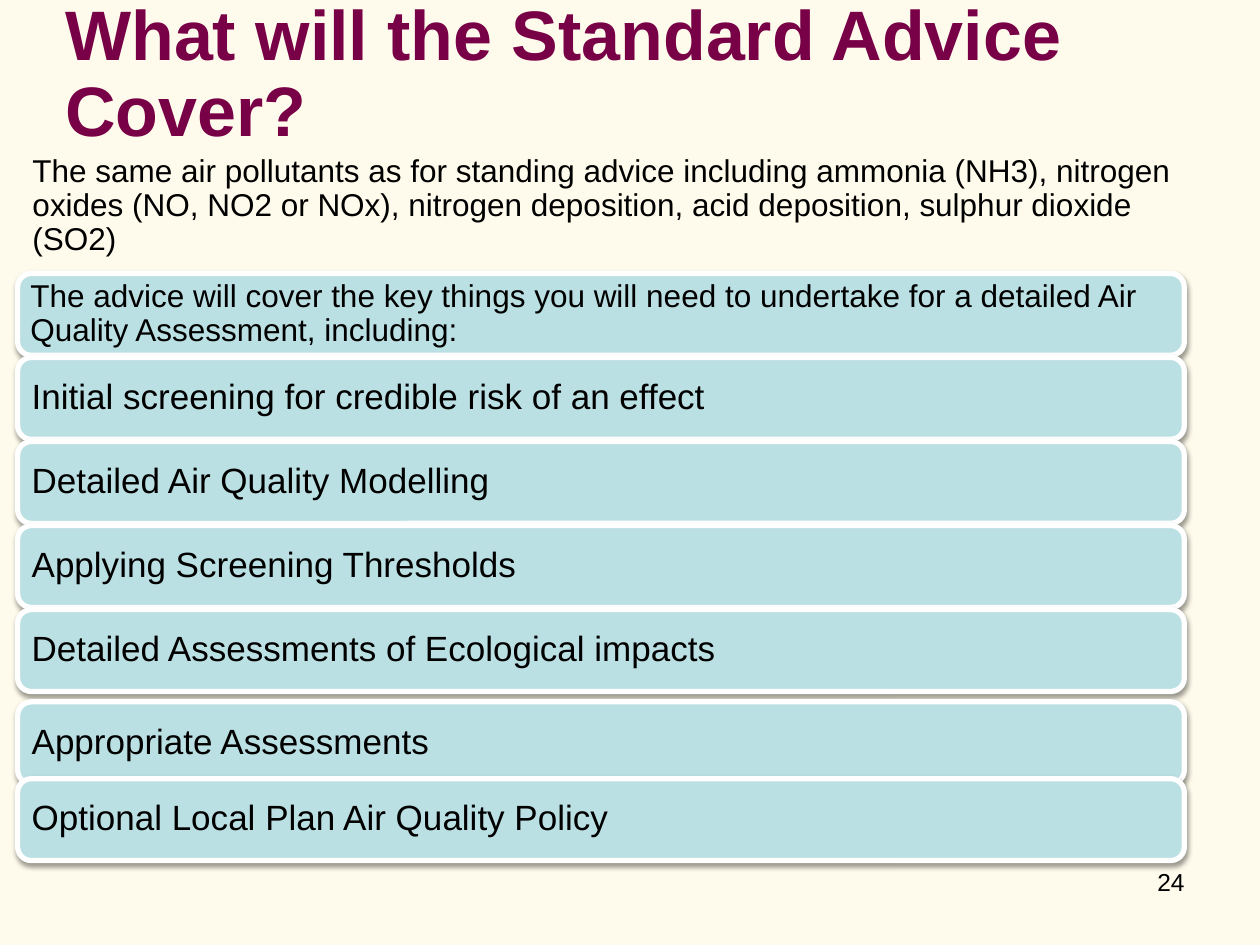
"""Build the slide listing what the standard advice will cover."""
from lxml import etree
from pptx import Presentation
from pptx.dml.color import RGBColor
from pptx.enum.shapes import MSO_SHAPE
from pptx.enum.text import MSO_ANCHOR, PP_ALIGN
from pptx.oxml import parse_xml
from pptx.oxml.ns import nsdecls, qn
from pptx.util import Inches, Pt

ROUNDED = MSO_SHAPE.ROUNDED_RECTANGLE
TOP, MIDDLE = MSO_ANCHOR.TOP, MSO_ANCHOR.MIDDLE
LEFT, RIGHT = PP_ALIGN.LEFT, PP_ALIGN.RIGHT

CREAM = RGBColor(0xFF, 0xFB, 0xEC)
PLUM = RGBColor(0x78, 0x00, 0x46)
BLACK = RGBColor(0x00, 0x00, 0x00)
WHITE = RGBColor(0xFF, 0xFF, 0xFF)
PALE_TEAL = RGBColor(0xBB, 0xE0, 0xE3)

TITLE = "What will the Standard Advice Cover?"
POLLUTANTS = (
    "The same air pollutants as for standing advice including ammonia (NH3), "
    "nitrogen oxides (NO, NO2 or NOx), nitrogen deposition, acid deposition, "
    "sulphur dioxide (SO2)"
)
PAGE_NUMBER = "24"
INTRO = (
    "The advice will cover the key things you will need to undertake "
    "for a detailed Air Quality Assessment, including:"
)
MAIN_STEPS = [
    "Initial screening for credible risk of an effect",
    "Detailed Air Quality Modelling",
    "Applying Screening Thresholds",
    "Detailed Assessments of Ecological impacts",
]
FINAL_STEPS = ["Appropriate Assessments", "Optional Local Plan Air Quality Policy"]

BAR_LEFT, BAR_WIDTH, BAR_HEIGHT = 0.14, 9.26, 0.65
MAIN_TOP, MAIN_PITCH = 2.17, 0.667
FINAL_TOP, FINAL_PITCH = 5.57, 0.61


def write(shape, text, size, color=BLACK, bold=False, anchor=TOP,
          align=LEFT, line_spacing=0.9):
    frame = shape.text_frame
    frame.word_wrap = True
    frame.vertical_anchor = anchor
    para = frame.paragraphs[0]
    para.alignment = align
    para.line_spacing = line_spacing
    span = para.add_run()
    span.text = text
    span.font.name = "Arial"
    span.font.size = Pt(size)
    span.font.bold = bold
    span.font.color.rgb = color


def add_text(page, bounds, text, size, **style):
    box = page.shapes.add_textbox(*map(Inches, bounds))
    write(box, text, size, **style)


def add_soft_shadow(shape):
    shape.shadow.inherit = False
    effects = shape.element.spPr.find(qn("a:effectLst"))
    shadow = parse_xml(
        f'<a:outerShdw {nsdecls("a")} blurRad="{Pt(3.1)}" dist="{Pt(1.6)}" '
        'dir="5400000" rotWithShape="0"/>'
    )
    color = etree.SubElement(shadow, qn("a:srgbClr"), val=str(BLACK))
    etree.SubElement(color, qn("a:alpha"), val="38000")
    effects.append(shadow)


def add_bar(page, top, text, size, margin):
    bar = page.shapes.add_shape(
        ROUNDED, *map(Inches, (BAR_LEFT, top, BAR_WIDTH, BAR_HEIGHT)))
    bar.fill.solid()
    bar.fill.fore_color.rgb = PALE_TEAL
    bar.line.color.rgb = WHITE
    bar.line.width = Pt(3)
    add_soft_shadow(bar)
    frame = bar.text_frame
    frame.margin_left = frame.margin_right = Inches(margin)
    frame.margin_top = frame.margin_bottom = Inches(margin)
    write(bar, text, size, anchor=MIDDLE)


def main():
    deck = Presentation()
    deck.slide_width, deck.slide_height = Inches(10), Inches(7.5)
    page = deck.slides.add_slide(deck.slide_layouts[6])
    page.background.fill.solid()
    page.background.fill.fore_color.rgb = CREAM

    add_text(page, (0.42, 0.23, 9.32, 0.74), TITLE, 40,
             color=PLUM, bold=True, anchor=MIDDLE)
    add_text(page, (0.16, 1.18, 9.37, 0.96), POLLUTANTS, 18)
    add_text(page, (7.17, 6.83, 2.33, 0.52), PAGE_NUMBER, 14,
             align=RIGHT, line_spacing=1.0)

    add_bar(page, MAIN_TOP, INTRO, 18, 0.07)
    for row, step in enumerate(MAIN_STEPS, start=1):
        add_bar(page, MAIN_TOP + row * MAIN_PITCH, step, 20, 0.08)
    for row, step in enumerate(FINAL_STEPS):
        add_bar(page, FINAL_TOP + row * FINAL_PITCH, step, 20, 0.08)

    deck.save("out.pptx")


if __name__ == "__main__":
    main()
